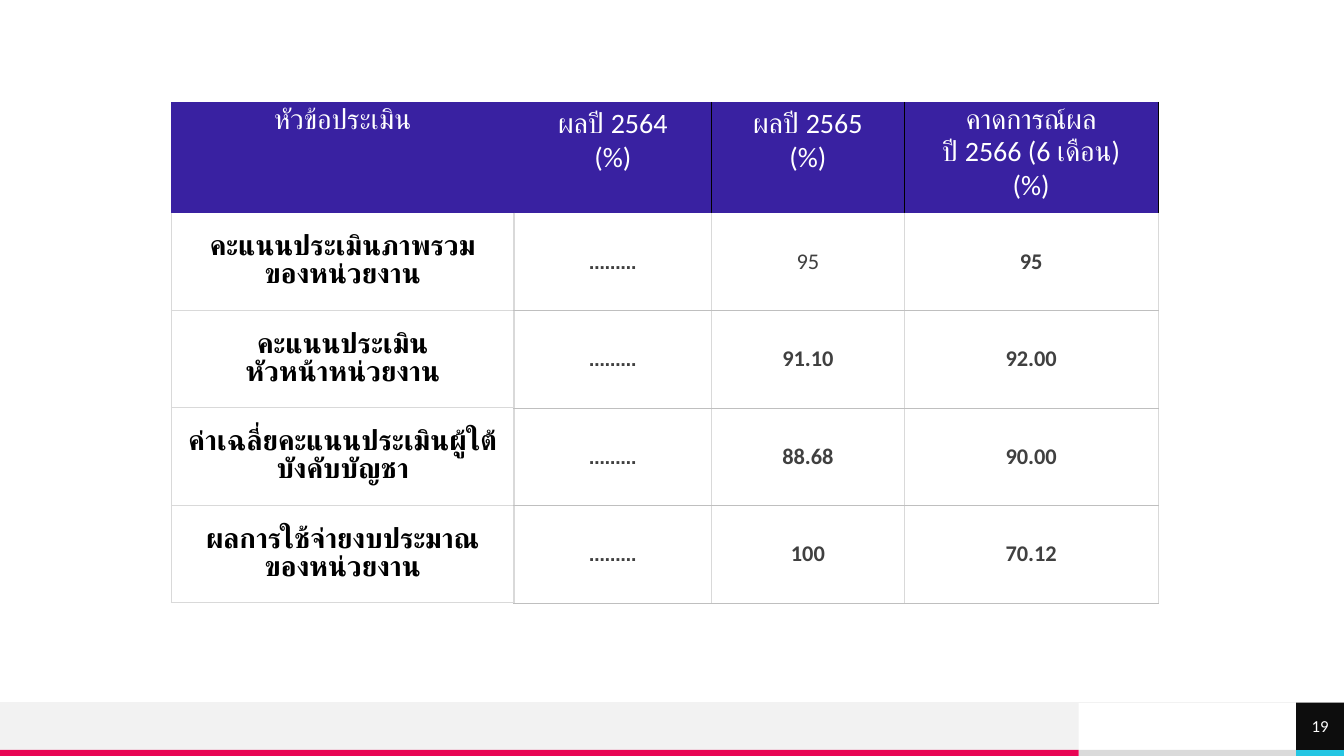
from typing import NamedTuple

from lxml import etree
from pptx import Presentation
from pptx import util as u
from pptx.dml.color import RGBColor
from pptx.enum import shapes, text
from pptx.oxml import ns

HUES = {"white": "FFFFFF", "black": "000000", "ink": "404040", "night": "0D0D0D",
        "violet": "3921A1", "pink": "E80554", "cyan": "25C6E3",
        "pale": "F2F2F2", "mist": "DADADA", "side": "D9D9D9", "rule": "BFBFBF"}
WIDE, HIGH = u.Inches(13.33), u.Inches(7.5)


class Block(NamedTuple):
    """A plain rectangle, in percent of the slide."""
    x: float
    y: float
    w: float
    h: float
    hue: str


class Edge(NamedTuple):
    hue: str
    width: float


SIDE, RULE, DARK = Edge("side", 1), Edge("rule", 0.25), Edge("black", 1)

FOOT, STRIP = 92.93, 99.2          # tops of the footer and its colour strip
SPLIT, LAST = 80.25, 96.45         # footer column starts
BLOCKS = [
    Block(SPLIT, STRIP, LAST - SPLIT, 100 - STRIP, "mist"),
    Block(0, FOOT, SPLIT, STRIP - FOOT, "pale"),
    Block(0, STRIP, SPLIT, 100 - STRIP, "pink"),
    Block(LAST, STRIP, 100 - LAST, 100 - STRIP, "cyan"),
]
PAGE = Block(LAST, FOOT, 100 - LAST, STRIP - FOOT, "night")

COLS = [25.5, 14.7, 14.33, 18.9]
ROWS = [14.67] + [12.9] * 4
HEAD = ["หัวข้อประเมิน", "ผลปี 2564\n(%)", "ผลปี 2565\n(%)",
        "คาดการณ์ผล\nปี 2566 (6 เดือน)\n(%)"]
BODY = [
    ["คะแนนประเมินภาพรวม\nของหน่วยงาน", "………", "95", "95"],
    ["คะแนนประเมิน\nหัวหน้าหน่วยงาน", "………", "91.10", "92.00"],
    ["ค่าเฉลี่ยคะแนนประเมินผู้ใต้บังคับบัญชา", "………", "88.68", "90.00"],
    ["ผลการใช้จ่ายงบประมาณ\nของหน่วยงาน", "………", "100", "70.12"],
]


def across(share: float) -> int:
    return int(WIDE * share / 100)


def down(share: float) -> int:
    return int(HIGH * share / 100)


def tint(hue: str) -> RGBColor:
    return RGBColor.from_string(HUES[hue])


def write(para, words: str, size: float = 20, hue: str = "white",
          bold: bool = False, face: str = "Calibri") -> None:
    """Add one formatted run to a centred paragraph."""
    para.alignment = text.PP_ALIGN.CENTER
    run = para.add_run()
    run.text = words
    font = run.font
    font.size, font.bold, font.name = u.Pt(size), bold, face
    font.color.rgb = tint(hue)


def draw(slide, block: Block):
    shape = slide.shapes.add_shape(
        shapes.MSO_SHAPE.RECTANGLE, across(block.x), down(block.y),
        across(block.w), down(block.h))
    shape.shadow.inherit = False
    shape.fill.solid()
    shape.fill.fore_color.rgb = tint(block.hue)
    shape.line.fill.background()
    return shape


def border(cell, edges: dict[str, Edge]) -> None:
    """Set all four borders; a side with no edge is hidden."""
    props = cell._tc.get_or_add_tcPr()
    for side in "LRTB":
        line = etree.SubElement(props, ns.qn(f"a:ln{side}"))
        edge = edges.get(side)
        if edge is None:
            etree.SubElement(line, ns.qn("a:noFill"))
            continue
        line.set("w", str(u.Pt(edge.width)))
        fill = etree.SubElement(line, ns.qn("a:solidFill"))
        etree.SubElement(fill, ns.qn("a:srgbClr"), val=HUES[edge.hue])


def edges(row: int, col: int) -> dict[str, Edge]:
    """Choose the borders of a table cell from its place."""
    if row == 0:
        found = {"L": DARK} if col > 1 else {}
        return found | ({"R": DARK} if col else {})
    flat = RULE if col else SIDE
    found = {"L": SIDE, "R": SIDE, "B": flat}
    return found | ({"T": flat} if row > 1 else {})


def style(row: int, col: int) -> dict:
    """Choose the text format of a table cell from its place."""
    if row == 0:
        return {}
    if col == 0:
        return {"hue": "black", "bold": True}
    return {"size": 16, "hue": "ink", "bold": (row, col) != (1, 2),
            "face": "Cabin" if col == 1 else "Calibri"}


def scores(slide) -> None:
    """Draw the table of assessment scores."""
    grid = slide.shapes.add_table(
        len(ROWS), len(COLS), across(12.75), down(13.47),
        across(sum(COLS)), down(sum(ROWS))).table
    grid.first_row = grid.horz_banding = False
    for col, share in zip(grid.columns, COLS):
        col.width = across(share)
    for row, share in zip(grid.rows, ROWS):
        row.height = down(share)
    for r, words in enumerate([HEAD] + BODY):
        for c, label in enumerate(words):
            cell = grid.cell(r, c)
            border(cell, edges(r, c))
            if r and c:
                cell.fill.background()
            else:
                cell.fill.solid()
                cell.fill.fore_color.rgb = tint("white" if r else "violet")
            if r:
                cell.vertical_anchor = text.MSO_ANCHOR.MIDDLE
            frame = cell.text_frame
            for n, line in enumerate(label.split("\n")):
                para = frame.add_paragraph() if n else frame.paragraphs[0]
                write(para, line, **style(r, c))


def number(slide) -> None:
    """Draw the page number in the corner."""
    frame = draw(slide, PAGE).text_frame
    frame.margin_left = frame.margin_right = 0
    frame.margin_top = frame.margin_bottom = 0
    frame.vertical_anchor = text.MSO_ANCHOR.MIDDLE
    write(frame.paragraphs[0], "19", size=12)


def main() -> None:
    deck = Presentation()
    deck.slide_width, deck.slide_height = WIDE, HIGH
    slide = deck.slides.add_slide(deck.slide_layouts[6])
    for block in BLOCKS:
        draw(slide, block)
    line = slide.shapes.add_connector(
        shapes.MSO_CONNECTOR.STRAIGHT, WIDE, down(FOOT), 0, down(FOOT))
    line.line.color.rgb = tint("pale")
    line.line.width = u.Pt(0.5)
    etree.SubElement(line._element.spPr, ns.qn("a:effectLst"))
    scores(slide)
    number(slide)
    deck.save("out.pptx")


if __name__ == "__main__":
    main()
